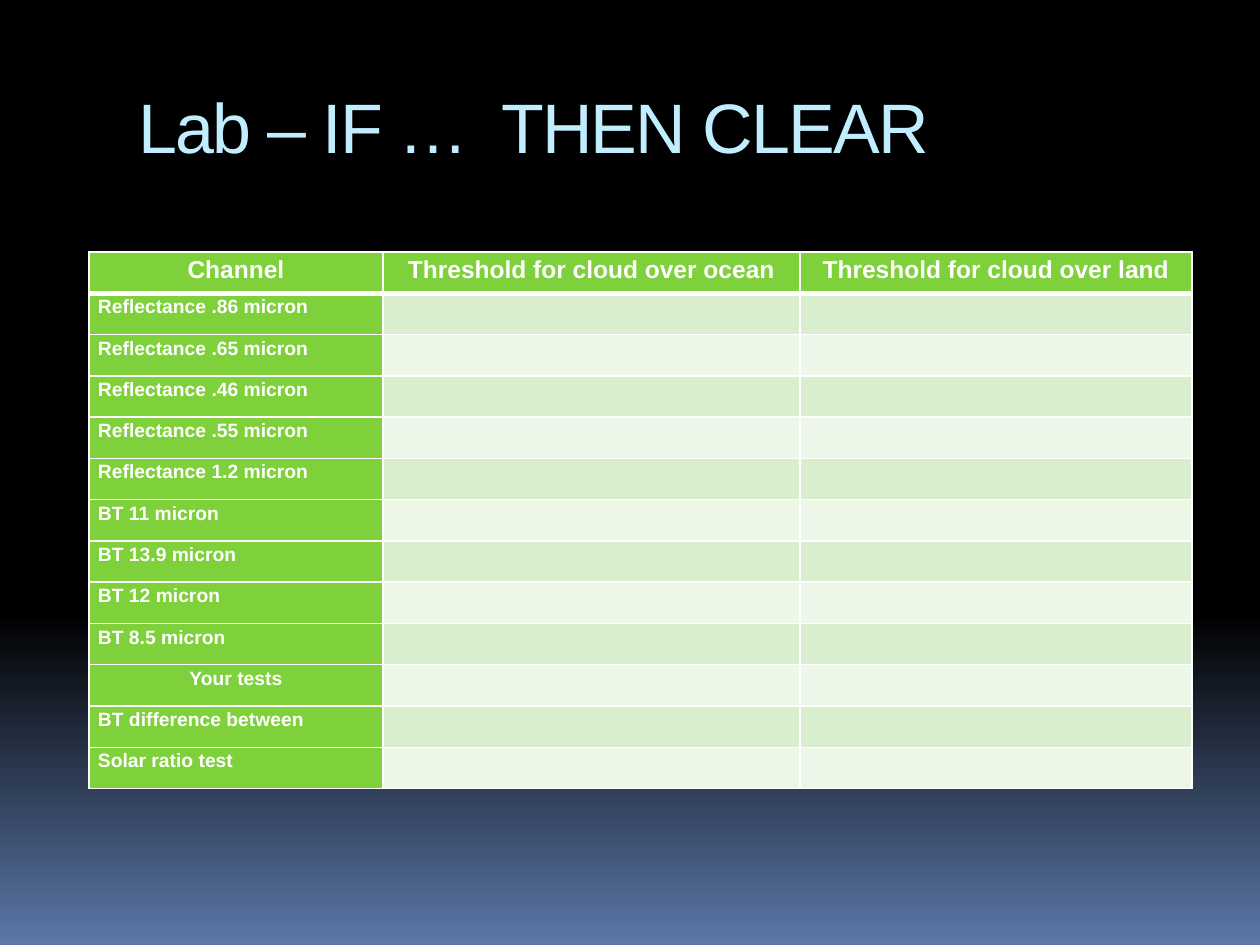
from lxml.etree import SubElement
from pptx import Presentation
from pptx.dml.color import RGBColor
from pptx.enum.text import MSO_ANCHOR, MSO_AUTO_SIZE, PP_ALIGN
from pptx.oxml.ns import qn
from pptx.util import Emu, Pt

COLORS = {
    "black": "000000",
    "dusk": "5B77A8",
    "title": "C1EEFF",
    "white": "FFFFFF",
    "green": "7FD13B",
    "band_dark": "D8EECE",
    "band_light": "ECF7E8",
}
FONT = "Arial"
HEADERS = ["Channel", "Threshold for cloud over ocean", "Threshold for cloud over land"]
CHANNELS = [
    "Reflectance .86 micron",
    "Reflectance .65 micron",
    "Reflectance .46 micron",
    "Reflectance .55 micron",
    "Reflectance 1.2 micron",
    "BT 11 micron",
    "BT 13.9 micron",
    "BT 12 micron",
    "BT 8.5 micron",
    "Your tests",
    "BT difference between",
    "Solar ratio test",
]
CENTERED = {*HEADERS, "Your tests"}
COLUMN_WIDTHS = [294, 417, 392]


def px(length):
    """Turn pixels into EMU at 126 pixels to the inch."""
    return Emu(round(length * 914400 / 126))


def color(name):
    """Look up a named colour."""
    return RGBColor.from_string(COLORS[name])


def set_values(target, values):
    """Set each attribute of a format object."""
    for name, value in values.items():
        setattr(target, name, value)


def format_font(font, size, color_name, bold):
    """Apply the slide's typeface with a size, colour and weight."""
    set_values(font, {"name": FONT, "size": Pt(size), "bold": bold})
    font.color.rgb = color(color_name)


def paint_background(slide):
    """Fill the slide with a vertical fade that starts low on the page."""
    fill = slide.background.fill
    fill.gradient()
    fill.gradient_angle = 270
    for stop, position, name in zip(fill.gradient_stops, (0.65, 1), ("black", "dusk")):
        stop.position = position
        stop.color.rgb = color(name)


def place_title(slide, left, top, width, height):
    """Place the title text in the title placeholder."""
    title = slide.shapes.title
    set_values(title, {"left": px(left), "top": px(top), "width": px(width), "height": px(height)})
    frame = title.text_frame
    set_values(frame, {
        "word_wrap": True,
        "auto_size": MSO_AUTO_SIZE.NONE,
        "vertical_anchor": MSO_ANCHOR.TOP,
        "margin_top": px(14),
    })
    paragraph = frame.paragraphs[0]
    paragraph.alignment = PP_ALIGN.LEFT
    paragraph.line_spacing = 1
    run = paragraph.add_run()
    run.text = "Lab – IF …  THEN CLEAR"
    format_font(run.font, 40, "title", False)
    run.font._element.set("spc", "-100")


def border_cell(cell, bottom_width):
    """Draw white borders round a cell."""
    properties = cell._tc.get_or_add_tcPr()
    widths = {"a:lnL": 1, "a:lnR": 1, "a:lnT": 1, "a:lnB": bottom_width}
    for tag, width in widths.items():
        line = SubElement(properties, qn(tag), w=str(Pt(width)))
        fill = SubElement(line, qn("a:solidFill"))
        SubElement(fill, qn("a:srgbClr"), val=COLORS["white"])


def style_cell(cell, fill_name, bottom_width=1):
    """Set the margins, borders and fill of a cell."""
    set_values(cell, {
        "margin_left": px(9), "margin_right": px(9), "margin_top": 0, "margin_bottom": 0,
    })
    border_cell(cell, bottom_width)
    cell.fill.solid()
    cell.fill.fore_color.rgb = color(fill_name)


def write_label(cell, text, size):
    """Write a bold white label in a cell."""
    paragraph = cell.text_frame.paragraphs[0]
    paragraph.alignment = PP_ALIGN.CENTER if text in CENTERED else PP_ALIGN.LEFT
    paragraph.line_spacing = 1.15
    run = paragraph.add_run()
    run.text = text
    format_font(run.font, size, "white", True)


def place_threshold_table(slide, left, top, width, height):
    """Place the table of channels with blank threshold cells."""
    row_count = len(CHANNELS) + 1
    table = slide.shapes.add_table(
        row_count, len(HEADERS), px(left), px(top), px(width), px(height)
    ).table
    for column, column_width in zip(table.columns, COLUMN_WIDTHS):
        column.width = px(column_width)
    for row in table.rows:
        row.height = px(height / row_count)
    for index, header in enumerate(HEADERS):
        cell = table.cell(0, index)
        style_cell(cell, "green", 3)
        write_label(cell, header, 14)
    for index, channel in enumerate(CHANNELS, start=1):
        label, *blanks = table.rows[index].cells
        style_cell(label, "green")
        write_label(label, channel, 11)
        for blank in blanks:
            style_cell(blank, "band_dark" if index % 2 else "band_light")


def main():
    """Build and save the slide."""
    presentation = Presentation()
    set_values(presentation, {"slide_width": px(1260), "slide_height": px(945)})
    slide = presentation.slides.add_slide(presentation.slide_layouts[5])
    paint_background(slide)
    place_title(slide, 126, 70, 1071, 126)
    place_threshold_table(slide, 89, 252, sum(COLUMN_WIDTHS), 537)
    presentation.save("out.pptx")


if __name__ == "__main__":
    main()
